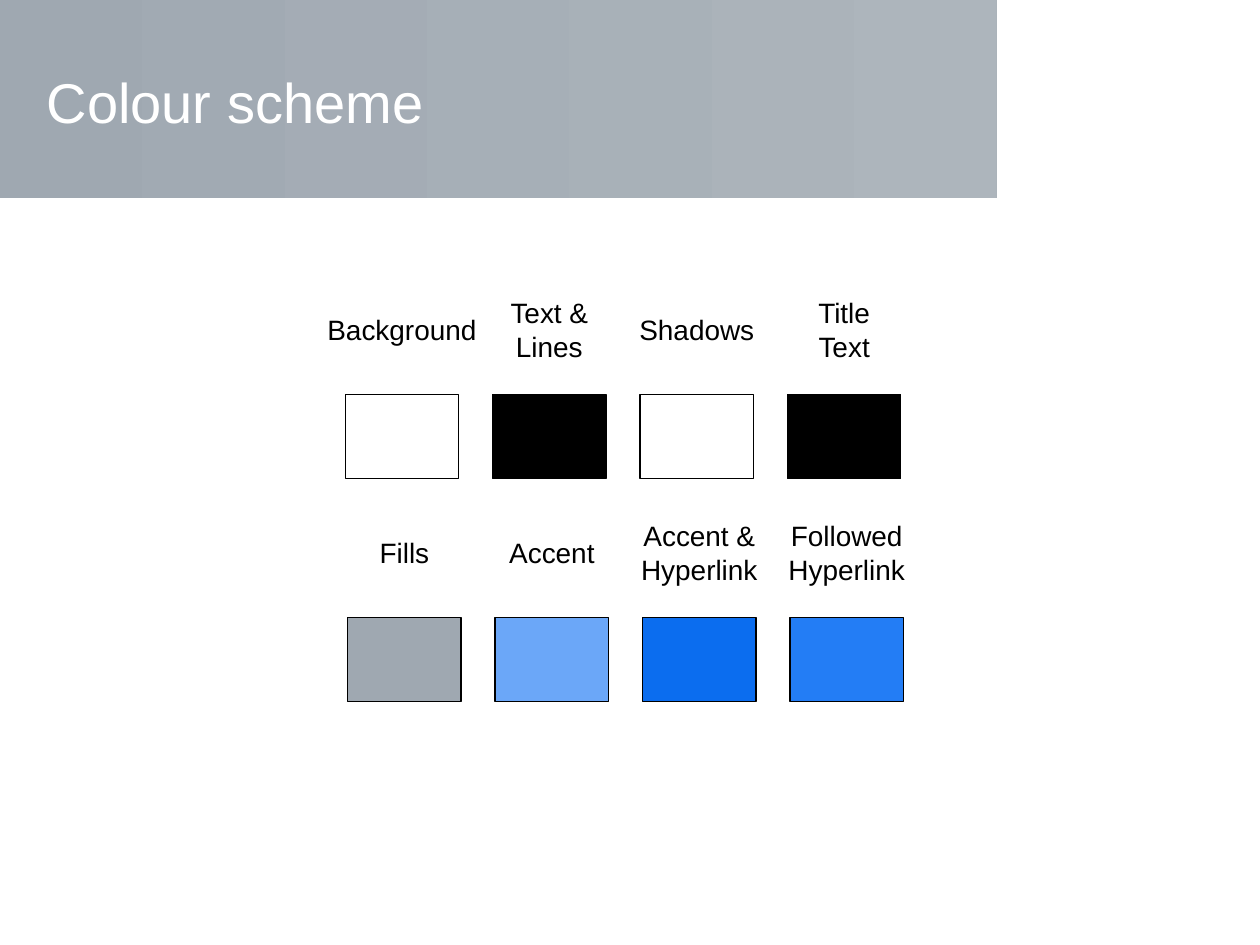
"""Build a slide that shows the eight colours of a template's colour scheme."""
from dataclasses import dataclass

from pptx import Presentation
from pptx.dml.color import RGBColor
from pptx.enum.shapes import MSO_SHAPE
from pptx.enum.text import MSO_ANCHOR, MSO_AUTO_SIZE, PP_ALIGN
from pptx.shapes.autoshape import Shape
from pptx.slide import Slide
from pptx.text.text import TextFrame
from pptx.util import Inches, Pt

SWATCH_WIDTH, SWATCH_HEIGHT = 0.9, 0.67
SWATCH_PITCH = 1.17
LABEL_PADDING, LINE_HEIGHT = 0.1, 0.27


@dataclass(frozen=True)
class Swatch:
    """A labelled colour of the scheme."""
    label: str
    label_width: float
    colour: str


@dataclass(frozen=True)
class SwatchRow:
    """A row of swatches with labels centred on one height."""
    left: float
    label_middle: float
    swatch_top: float
    swatches: tuple[Swatch, ...]


ROWS = (
    SwatchRow(2.74, 2.62, 3.13, (
        Swatch("Background", 1.39, "FFFFFF"),
        Swatch("Text &\nLines", 0.84, "000000"),
        Swatch("Shadows", 1.11, "FFFFFF"),
        Swatch("Title\vText", 0.63, "000000"),
    )),
    SwatchRow(2.76, 4.39, 4.9, (
        Swatch("Fills", 0.59, "9FA8B1"),
        Swatch("Accent", 0.88, "6BA7F8"),
        Swatch("Accent &\nHyperlink", 1.12, "0B6DEF"),
        Swatch("Followed\nHyperlink", 1.12, "237DF5"),
    )),
)


def rgb(colour: str) -> RGBColor:
    """Turn a hex string into a colour."""
    return RGBColor.from_string(colour)


def style_text(frame: TextFrame, size: float, colour: str, alignment: PP_ALIGN) -> None:
    """Format every paragraph of a text frame alike."""
    for paragraph in frame.paragraphs:
        paragraph.alignment = alignment
        paragraph.font.name = "Arial"
        paragraph.font.size = Pt(size)
        paragraph.font.color.rgb = rgb(colour)


def add_rectangle(slide: Slide, left: float, top: float, width: float, height: float) -> Shape:
    """Add a rectangle without a shadow."""
    rectangle = slide.shapes.add_shape(
        MSO_SHAPE.RECTANGLE, Inches(left), Inches(top), Inches(width), Inches(height))
    rectangle.shadow.inherit = False
    return rectangle


def add_header(slide: Slide, heading: str) -> None:
    """Place the title on a graded band."""
    title = slide.shapes.title
    title.left, title.top = Inches(0.27), Inches(0.3)
    title.width, title.height = Inches(7.48), Inches(1.01)
    title.text_frame.text = heading
    title.text_frame.vertical_anchor = MSO_ANCHOR.MIDDLE
    style_text(title.text_frame, 32, "FFFFFF", PP_ALIGN.LEFT)

    band = add_rectangle(slide, 0, 0, 7.91, 1.57)
    band.line.fill.background()
    band.fill.gradient()
    band.fill.gradient_angle = 0
    for stop, colour in zip(band.fill.gradient_stops, ("9FA8B1", "ADB5BC")):
        stop.color.rgb = rgb(colour)
    title.element.addprevious(band.element)


def add_label(slide: Slide, swatch: Swatch, centre: float, middle: float) -> None:
    """Centre the label of a swatch on a point."""
    height = LABEL_PADDING + LINE_HEIGHT * len(swatch.label.splitlines())
    label = slide.shapes.add_textbox(
        Inches(centre - swatch.label_width / 2), Inches(middle - height / 2),
        Inches(swatch.label_width), Inches(height))
    frame = label.text_frame
    frame.text = swatch.label
    frame.margin_left = frame.margin_right = Inches(0.05)
    frame.word_wrap = False
    frame.auto_size = MSO_AUTO_SIZE.SHAPE_TO_FIT_TEXT
    style_text(frame, 16, "000000", PP_ALIGN.CENTER)


def add_swatch_row(slide: Slide, row: SwatchRow) -> None:
    """Draw evenly spaced swatches under their labels."""
    for column, swatch in enumerate(row.swatches):
        left = row.left + column * SWATCH_PITCH
        sample = add_rectangle(slide, left, row.swatch_top, SWATCH_WIDTH, SWATCH_HEIGHT)
        sample.fill.solid()
        sample.fill.fore_color.rgb = rgb(swatch.colour)
        sample.line.color.rgb = rgb("000000")
        sample.line.width = Pt(0.75)
        add_label(slide, swatch, left + SWATCH_WIDTH / 2, row.label_middle)


def main() -> None:
    """Build and save the presentation."""
    presentation = Presentation()
    presentation.slide_width, presentation.slide_height = Inches(10), Inches(7.5)
    slide = presentation.slides.add_slide(presentation.slide_layouts[5])
    add_header(slide, "Colour scheme")
    for row in ROWS:
        add_swatch_row(slide, row)
    presentation.save("out.pptx")


if __name__ == "__main__":
    main()
